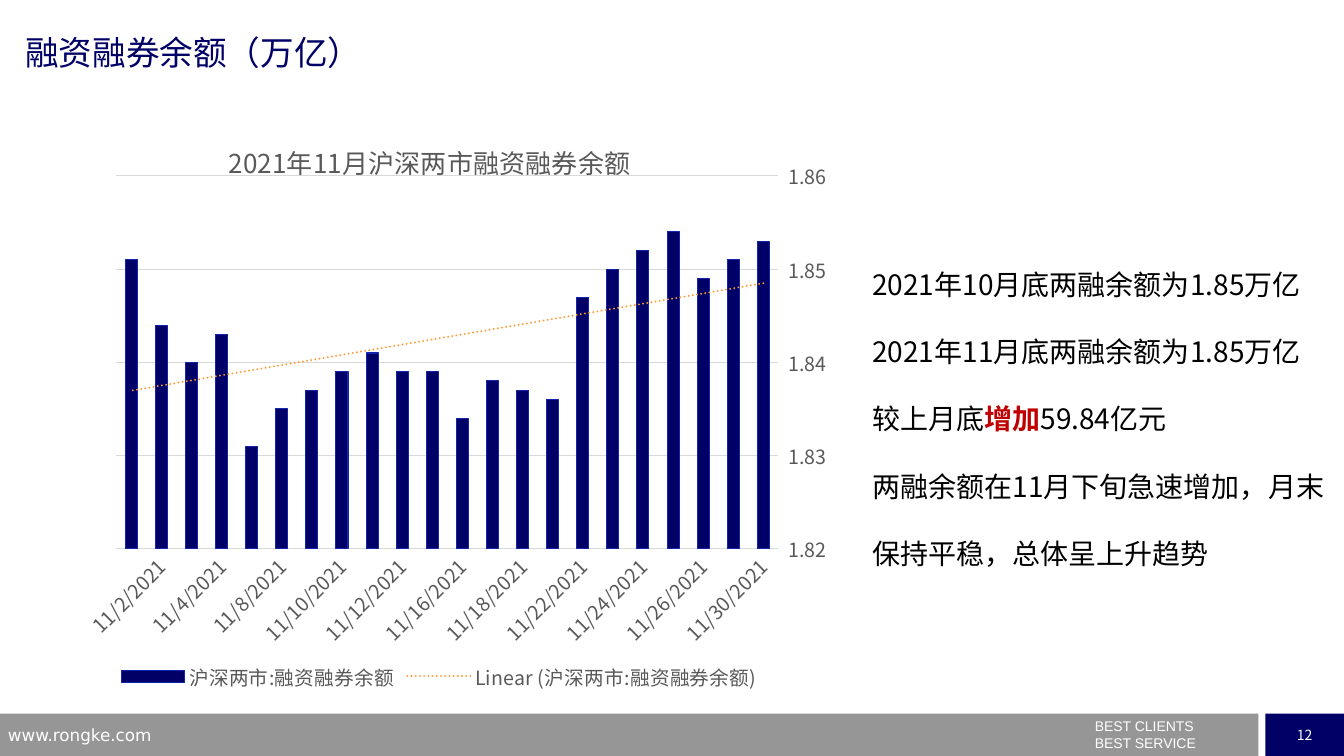
from pptx import Presentation
from pptx.chart.data import CategoryChartData
from pptx.dml.color import RGBColor
from pptx.enum.chart import XL_AXIS_CROSSES, XL_CHART_TYPE, XL_LEGEND_POSITION, XL_TICK_MARK
from pptx.enum.shapes import MSO_SHAPE
from pptx.enum.text import MSO_ANCHOR, MSO_AUTO_SIZE, PP_ALIGN
from pptx.oxml import parse_xml
from pptx.oxml.ns import nsdecls, qn
from pptx.util import Inches, Pt

COLORS = {"navy": "000066", "bar_edge": "1225AF", "trend": "FF9933", "gray": "969696",
          "grid": "D9D9D9", "label": "595959", "text": "000000", "rise": "C00000",
          "white": "FFFFFF"}
CJK = "Noto Sans CJK SC"

HEADING = "融资融券余额（万亿）"
SERIES = "沪深两市:融资融券余额"
CHART_TITLE = "2021年11月沪深两市融资融券余额"
TRADING_DAYS = [30, 29, 26, 25, 24, 23, 22, 19, 18, 17, 16, 15, 12, 11, 10, 9, 8, 5, 4, 3, 2, 1]
BALANCES = [1.853, 1.851, 1.849, 1.854, 1.852, 1.85, 1.847, 1.836, 1.837, 1.838, 1.834,
            1.839, 1.839, 1.841, 1.839, 1.837, 1.835, 1.831, 1.843, 1.84, 1.844, 1.851]
COMMENTS = [
    [("2021年10月底两融余额为1.85万亿", False)],
    [("2021年11月底两融余额为1.85万亿", False)],
    [("较上月底", False), ("增加", True), ("59.84亿元", False)],
    [("两融余额在11月下旬急速增加，月末保持平稳，总体呈上升趋势", False)],
]


def rgb(name):
    return RGBColor.from_string(COLORS[name])


def style_font(font, size, color, name=CJK, bold=False):
    font.size = Pt(size)
    font.name = name
    font.bold = bold
    font.color.rgb = rgb(color)


def add_run(paragraph, text, size, color, name=CJK, bold=False):
    run = paragraph.add_run()
    run.text = text
    style_font(run.font, size, color, name, bold)


def match_east_asian(root):
    """Give Chinese characters the same font as the Latin ones."""
    for latin in list(root.iter(qn("a:latin"))):
        latin.addnext(parse_xml(f'<a:ea {nsdecls("a")} typeface="{latin.get("typeface")}"/>'))


def place(shape, box):
    shape.left, shape.top, shape.width, shape.height = (Inches(v) for v in box)


def clear_margins(frame):
    frame.margin_left = frame.margin_right = frame.margin_top = frame.margin_bottom = 0
    frame.vertical_anchor = MSO_ANCHOR.TOP
    frame.auto_size = MSO_AUTO_SIZE.NONE
    frame.word_wrap = True


def add_heading(slide, box):
    title = slide.shapes.title
    place(title, box)
    clear_margins(title.text_frame)
    paragraph = title.text_frame.paragraphs[0]
    paragraph.alignment = PP_ALIGN.LEFT
    add_run(paragraph, HEADING, 24, "navy")


def add_comments(slide, box):
    body = slide.placeholders[1]
    place(body, box)
    frame = body.text_frame
    clear_margins(frame)
    for index, pieces in enumerate(COMMENTS):
        paragraph = frame.add_paragraph() if index else frame.paragraphs[0]
        properties = paragraph._p.get_or_add_pPr()
        properties.set("marL", "0")
        properties.set("indent", "0")
        properties.append(parse_xml(f'<a:buNone {nsdecls("a")}/>'))
        paragraph.line_spacing = 2.0
        paragraph.space_before = Pt(0)
        for text, rise in pieces:
            add_run(paragraph, text, 20, "rise" if rise else "text", bold=rise)


def manual_layout(x, y, w=None, h=None):
    target = '<c:layoutTarget val="inner"/>' if w else ""
    size = f'<c:w val="{w}"/><c:h val="{h}"/>' if w else ""
    return parse_xml(
        f'<c:layout {nsdecls("c")}><c:manualLayout>{target}<c:xMode val="edge"/>'
        f'<c:yMode val="edge"/><c:x val="{x}"/><c:y val="{y}"/>{size}'
        '</c:manualLayout></c:layout>')


def add_trend_line(series):
    trend = parse_xml(
        f'<c:trendline {nsdecls("c", "a")}><c:spPr><a:ln w="{Pt(1.5)}" cap="rnd"><a:solidFill>'
        f'<a:srgbClr val="{COLORS["trend"]}"/></a:solidFill><a:prstDash val="sysDot"/></a:ln>'
        '</c:spPr><c:trendlineType val="linear"/><c:dispRSqr val="0"/><c:dispEq val="0"/>'
        '</c:trendline>')
    series._element.find(qn("c:cat")).addprevious(trend)


def style_axes(chart):
    dates, balances = chart.category_axis, chart.value_axis
    for axis in (dates, balances):
        style_font(axis.tick_labels.font, 14, "label")
    dates.reverse_order = True
    dates.crosses = XL_AXIS_CROSSES.MAXIMUM
    dates.major_tick_mark = XL_TICK_MARK.NONE
    dates.format.line.color.rgb = rgb("grid")
    dates.format.line.width = Pt(0.75)
    dates._element.find(qn("c:txPr")).find(qn("a:bodyPr")).set("rot", "-2700000")
    balances.minimum_scale, balances.maximum_scale = 1.82, 1.86
    balances.major_unit = 0.01
    balances.tick_labels.number_format = "0.00_ "
    balances.tick_labels.number_format_is_linked = False
    balances.format.line.fill.background()
    balances.major_gridlines.format.line.color.rgb = rgb("grid")
    balances.major_gridlines.format.line.width = Pt(0.75)


def add_balance_chart(slide, box):
    data = CategoryChartData()
    data.categories = [f"11/{day}/2021" for day in TRADING_DAYS]
    data.add_series(SERIES, BALANCES)
    chart = slide.shapes.add_chart(
        XL_CHART_TYPE.COLUMN_CLUSTERED, *(Inches(v) for v in box), data).chart
    style_font(chart.font, 10, "text")
    add_run(chart.chart_title.text_frame.paragraphs[0], CHART_TITLE, 18.6, "label")
    chart.chart_title.include_in_layout = False
    title = chart.chart_title._element
    for old in title.findall(qn("c:layout")):
        title.remove(old)
    title.find(qn("c:tx")).addnext(manual_layout(0.24, 0.04))

    plot = chart.plots[0]
    plot.gap_width = 150
    plot.vary_by_categories = False
    bars = plot.series[0]
    bars.format.fill.solid()
    bars.format.fill.fore_color.rgb = rgb("navy")
    bars.format.line.color.rgb = rgb("bar_edge")
    bars.format.line.width = Pt(0.75)
    add_trend_line(bars)
    style_axes(chart)

    chart.has_legend = True
    chart.legend.position = XL_LEGEND_POSITION.BOTTOM
    chart.legend.include_in_layout = False
    style_font(chart.legend.font, 14, "label")
    plot_area = chart._chartSpace.chart.plotArea
    for old in plot_area.findall(qn("c:layout")):
        plot_area.remove(old)
    plot_area.insert(0, manual_layout(0.11, 0.11, 0.8, 0.64))
    match_east_asian(chart._chartSpace)


def add_band(slide, box, color):
    band = slide.shapes.add_shape(MSO_SHAPE.RECTANGLE, *(Inches(v) for v in box))
    band.shadow.inherit = False
    band.fill.solid()
    band.fill.fore_color.rgb = rgb(color)
    band.line.fill.background()
    return band


def add_footer(slide, box):
    left, top, width, height = box
    add_band(slide, (left, top, 12.48, height), "gray")
    number = add_band(slide, (left + 12.55, top, width - 12.55, height), "navy").text_frame
    number.vertical_anchor = MSO_ANCHOR.MIDDLE
    number.word_wrap = False
    number.paragraphs[0].alignment = PP_ALIGN.CENTER
    add_run(number.paragraphs[0], "12", 10, "white")

    notes = [(-0.02, 3.22, ["www.rongke.com"], 12, "DejaVu Sans"),
             (10.76, 1.72, ["BEST CLIENTS", "BEST SERVICE"], 10, "Arial")]
    for offset, note_width, lines, size, font in notes:
        frame = slide.shapes.add_textbox(Inches(left + offset), Inches(top + 0.06),
                                         Inches(note_width), Inches(0.36)).text_frame
        frame.word_wrap = True
        for index, line in enumerate(lines):
            paragraph = frame.add_paragraph() if index else frame.paragraphs[0]
            if len(lines) > 1:
                paragraph.line_spacing = 0.5
                paragraph.space_before = Pt(6 if index else 0)
            add_run(paragraph, line, size, "white", font)


def main():
    deck = Presentation()
    deck.slide_width, deck.slide_height = Inches(13.33), Inches(7.5)
    slide = deck.slides.add_slide(deck.slide_layouts[1])
    add_footer(slide, (0, 7.08, 13.33, 0.42))
    add_heading(slide, (0.25, 0.32, 9, 0.51))
    add_comments(slide, (8.65, 2.32, 4.68, 3.37))
    add_balance_chart(slide, (0.25, 1.11, 8.21, 5.78))
    match_east_asian(slide.shapes._spTree)
    deck.save("out.pptx")


if __name__ == "__main__":
    main()
